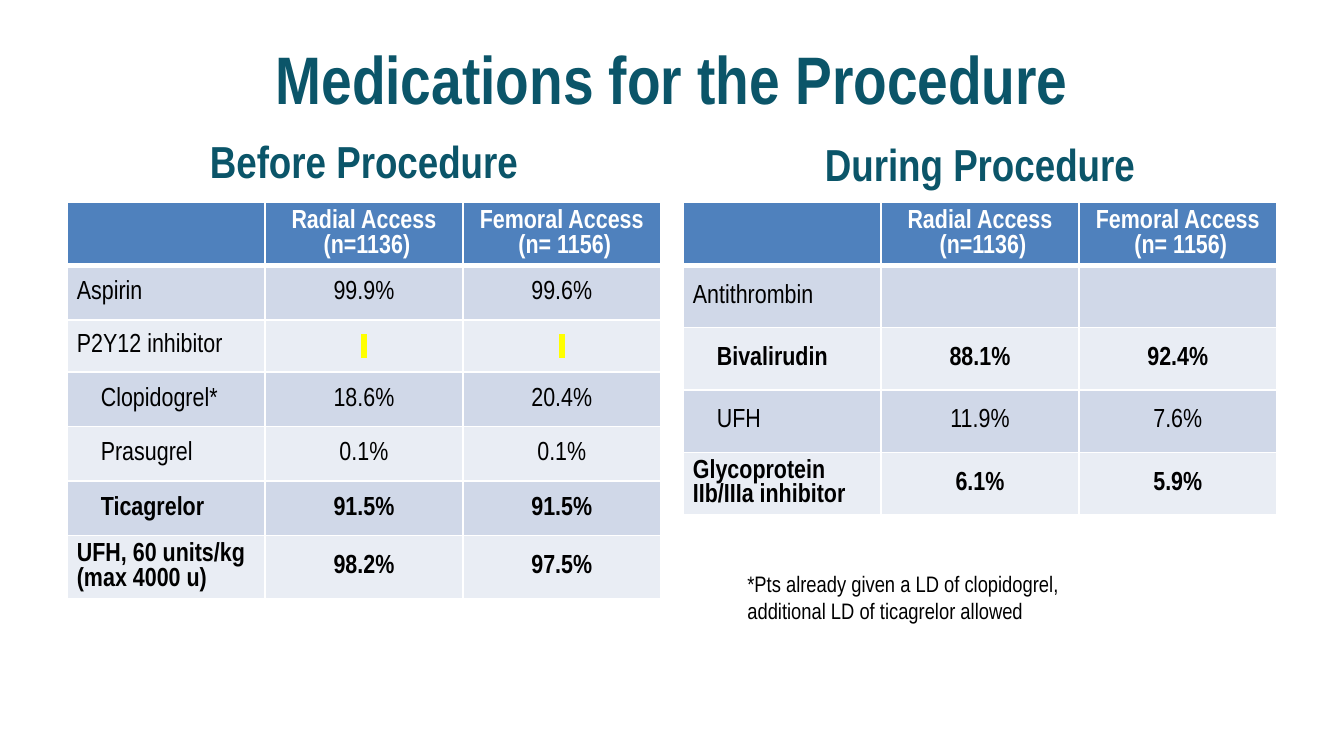
"""Build the slide that compares medications before and during the procedure."""
from lxml.etree import SubElement
from pptx import Presentation
from pptx.dml.color import RGBColor
from pptx.enum.text import MSO_ANCHOR, PP_ALIGN
from pptx.oxml import parse_xml
from pptx.oxml.ns import nsdecls, qn
from pptx.util import Pt

FONT = "Arial Narrow"
TEAL = RGBColor(0x0B, 0x55, 0x69)
BLUE = RGBColor(0x4F, 0x81, 0xBD)
BANDS = RGBColor(0xE9, 0xED, 0xF4), RGBColor(0xD0, 0xD8, 0xE8)
WHITE = RGBColor(0xFF, 0xFF, 0xFF)
BLACK = RGBColor(0, 0, 0)
YELLOW = RGBColor(0xFF, 0xFF, 0)

TITLE = "Medications for the Procedure"
HEAD = ("", "Radial Access\n (n=1136)", "Femoral Access\n (n= 1156)")
MARK = " "
NOTE = "*Pts already given a LD of clopidogrel,\nadditional LD of ticagrelor allowed"

PANELS = [
    dict(name="Before Procedure", left=36, top=66.5,
         sizes=[29.2, 29.2, 28, 29.2, 29.2, 29.2, 29.2],
         rows=[("Aspirin", "99.9%", "99.6%", False, False),
               ("P2Y12 inhibitor", MARK, MARK, False, False),
               ("Clopidogrel*", "18.6%", "20.4%", True, False),
               ("Prasugrel", "0.1%", "0.1%", True, False),
               ("Ticagrelor", "91.5%", "91.5%", True, True),
               ("UFH, 60 units/kg (max 4000 u)", "98.2%", "97.5%", False, True)]),
    dict(name="During Procedure", left=366, top=68,
         sizes=[29.2, 33.4, 33.4, 33.4, 33.4],
         rows=[("Antithrombin", "", "", False, False),
               ("Bivalirudin", "88.1%", "92.4%", True, True),
               ("UFH", "11.9%", "7.6%", True, False),
               ("Glycoprotein IIb/IIIa inhibitor", "6.1%", "5.9%", False, True)]),
]
WIDE = 318
TOP = 108.5


def style(frame, size, color, bold=False, align=PP_ALIGN.CENTER):
    for para in frame.paragraphs:
        para.alignment = align
        font = para.font
        font.name, font.size, font.bold = FONT, Pt(size), bold
        font.color.rgb = color


def add_box(slide, text, left, top, width, height):
    frame = slide.shapes.add_textbox(Pt(left), Pt(top), Pt(width), Pt(height)).text_frame
    frame.word_wrap = True
    frame.text = text
    return frame


def edge(cell, row):
    props = cell._tc.get_or_add_tcPr()
    widths = dict(L=1, R=1, T=3 if row == 1 else 1, B=3 if row == 0 else 1)
    for spot, (side, width) in enumerate(widths.items()):
        props.insert(spot, parse_xml(
            f'<a:ln{side} {nsdecls("a")} w="{Pt(width)}"><a:solidFill>'
            f'<a:srgbClr val="{WHITE}"/></a:solidFill></a:ln{side}>'))


def mark(run):
    light = SubElement(run._r.get_or_add_rPr(), qn("a:highlight"))
    SubElement(light, qn("a:srgbClr")).set("val", str(YELLOW))


def fill_cell(cell, text, row, col, inset, bold):
    cell.margin_left = cell.margin_right = Pt(5.2)
    cell.margin_top = cell.margin_bottom = 0
    cell.vertical_anchor = MSO_ANCHOR.MIDDLE
    cell.fill.solid()
    cell.fill.fore_color.rgb = BANDS[row % 2] if row else BLUE
    edge(cell, row)
    frame = cell.text_frame
    frame.text = text
    align = PP_ALIGN.CENTER if col or not row else PP_ALIGN.LEFT
    style(frame, 14, BLACK if row else WHITE, bold, align)
    if inset and col == 0:
        frame.paragraphs[0]._p.get_or_add_pPr().set("marL", str(Pt(12.8)))
    if text == MARK:
        mark(frame.paragraphs[0].runs[0])


def add_panel(slide, panel):
    frame = add_box(slide, panel["name"], panel["left"], panel["top"], WIDE, 37.4)
    frame.vertical_anchor = MSO_ANCHOR.BOTTOM
    style(frame, 24, TEAL, True)
    sizes = panel["sizes"]
    table = slide.shapes.add_table(len(sizes), len(HEAD), Pt(panel["left"]), Pt(TOP),
                                   Pt(WIDE), Pt(sum(sizes))).table
    for line, size in zip(table.rows, sizes):
        line.height = Pt(size)
    for row, (*texts, inset, bold) in enumerate([(*HEAD, False, True), *panel["rows"]]):
        for col, text in enumerate(texts):
            fill_cell(table.cell(row, col), text, row, col, inset, bold)


def main():
    deck = Presentation()
    deck.slide_width, deck.slide_height = Pt(720), Pt(405)
    slide = deck.slides.add_slide(deck.slide_layouts[5])
    title = slide.shapes.title
    title.left, title.top, title.width, title.height = 0, Pt(10.8), Pt(720), Pt(61.5)
    title.text_frame.text = TITLE
    title.text_frame.vertical_anchor = MSO_ANCHOR.MIDDLE
    style(title.text_frame, 36, TEAL, True)
    for panel in PANELS:
        add_panel(slide, panel)
    style(add_box(slide, NOTE, 393.3, 302, 186, 36), 12, BLACK, align=PP_ALIGN.LEFT)
    deck.save("out.pptx")


if __name__ == "__main__":
    main()
